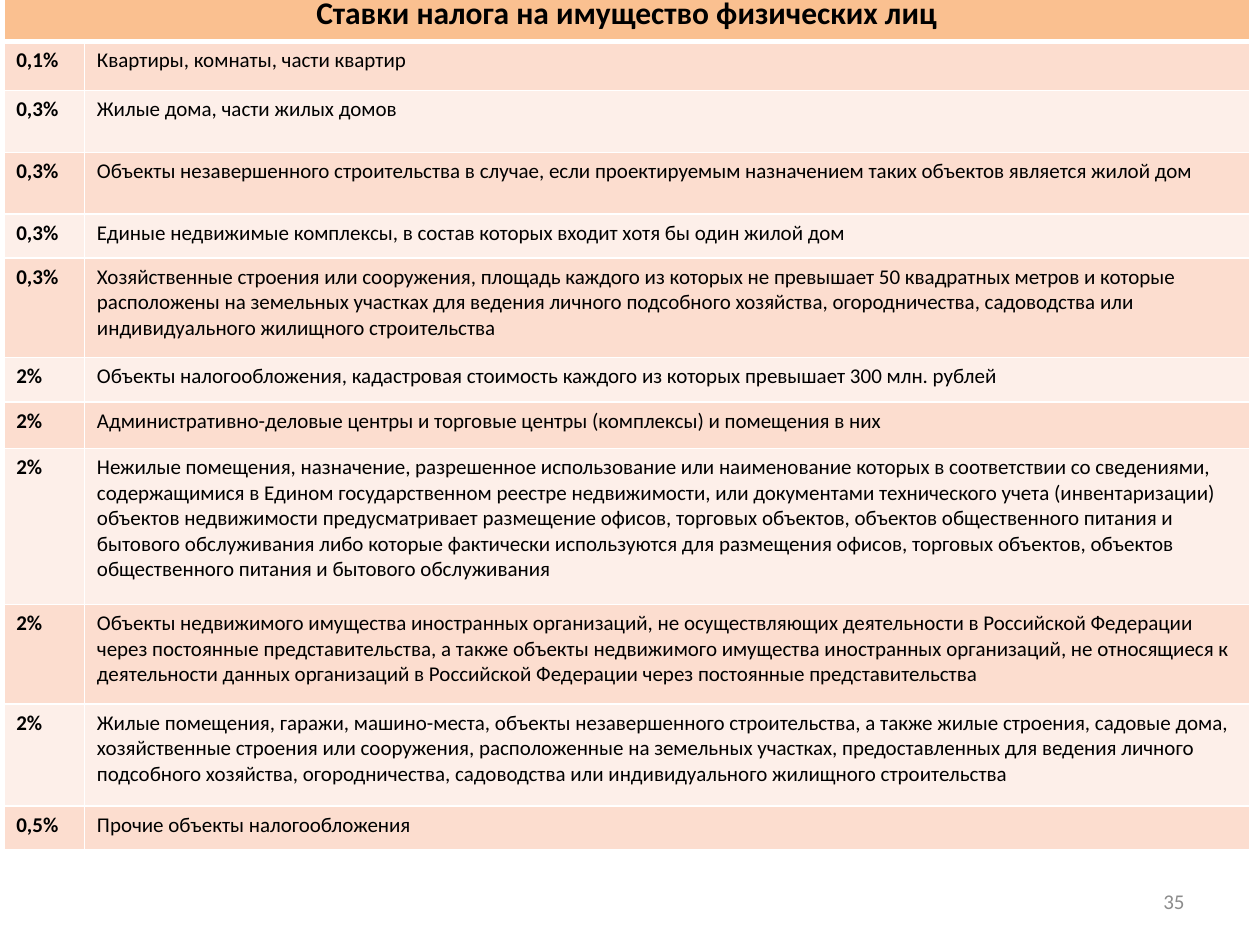
from lxml.etree import SubElement
from pptx import Presentation
from pptx.dml.color import RGBColor
from pptx.enum.text import MSO_ANCHOR, PP_ALIGN
from pptx.oxml.ns import qn
from pptx.util import Inches, Pt

COLORS = {"text": "000000", "header": "FAC090", "odd": "FCDDCF", "even": "FDEFE9",
          "border": "FFFFFF", "page": "8C8C8C"}
TITLE = "Ставки налога на имущество физических лиц"
PAGE = "35"
# rate, taxed property, row height in inches
RATES = [
    ("0,1%", "Квартиры, комнаты, части квартир", 0.39),
    ("0,3%", "Жилые дома, части жилых домов", 0.49),
    ("0,3%", "Объекты незавершенного строительства в случае, если проектируемым назначением "
             "таких объектов является жилой дом", 0.49),
    ("0,3%", "Единые недвижимые комплексы, в состав которых входит хотя бы один жилой дом", 0.35),
    ("0,3%", "Хозяйственные строения или сооружения, площадь каждого из которых не превышает "
             "50 квадратных метров и которые расположены на земельных участках для ведения "
             "личного подсобного хозяйства, огородничества, садоводства или индивидуального "
             "жилищного строительства", 0.79),
    ("2%", "Объекты налогообложения, кадастровая стоимость каждого из которых превышает "
           "300 млн. рублей", 0.35),
    ("2%", "Административно-деловые центры и торговые центры (комплексы) и помещения в них", 0.37),
    ("2%", "Нежилые помещения, назначение, разрешенное использование или наименование которых "
           "в соответствии со сведениями, содержащимися в Едином государственном реестре "
           "недвижимости, или документами технического учета (инвентаризации) объектов "
           "недвижимости предусматривает размещение офисов, торговых объектов, объектов "
           "общественного питания и бытового обслуживания либо которые фактически используются "
           "для размещения офисов, торговых объектов, объектов общественного питания и бытового "
           "обслуживания", 1.24),
    ("2%", "Объекты недвижимого имущества иностранных организаций, не осуществляющих "
           "деятельности в Российской Федерации через постоянные представительства, а также "
           "объекты недвижимого имущества иностранных организаций, не относящиеся к "
           "деятельности данных организаций в Российской Федерации через постоянные "
           "представительства", 0.79),
    ("2%", "Жилые помещения, гаражи, машино-места, объекты незавершенного строительства, а "
           "также жилые строения, садовые дома, хозяйственные строения или сооружения, "
           "расположенные на земельных участках, предоставленных для ведения личного подсобного "
           "хозяйства, огородничества, садоводства или индивидуального жилищного "
           "строительства", 0.81),
    ("0,5%", "Прочие объекты налогообложения", 0.35),
]
COL_WIDTHS = [0.64, 9.25]
ROW_HEIGHTS = [0.42] + [height for _, _, height in RATES]


def set_text(tf, text, size=12, bold=False, color="text", align=PP_ALIGN.LEFT):
    p = tf.paragraphs[0]
    p.alignment = align
    r = p.add_run()
    r.text = text
    r.font.name = "Calibri"
    r.font.size = Pt(size)
    r.font.bold = bold
    r.font.color.rgb = RGBColor.from_string(COLORS[color])


def set_borders(cell, bottom=1):
    """Draw 1 pt borders round the cell, with a bottom border of its own width."""
    tc_pr = cell._tc.get_or_add_tcPr()
    for side, width in (("L", 1), ("R", 1), ("T", 1), ("B", bottom)):
        ln = SubElement(tc_pr, qn(f"a:ln{side}"), w=str(Pt(width)))
        fill = SubElement(ln, qn("a:solidFill"))
        SubElement(fill, qn("a:srgbClr"), val=COLORS["border"])


def fill_cell(cell, text, fill, bottom=1, **text_format):
    set_borders(cell, bottom)
    cell.fill.solid()
    cell.fill.fore_color.rgb = RGBColor.from_string(COLORS[fill])
    set_text(cell.text_frame, text, **text_format)


def add_rates_table(s):
    frame = s.shapes.add_table(len(ROW_HEIGHTS), len(COL_WIDTHS), Inches(0.03), Inches(-0.09),
                               Inches(sum(COL_WIDTHS)), Inches(sum(ROW_HEIGHTS)))
    table = frame.table
    for col, width in zip(table.columns, COL_WIDTHS):
        col.width = Inches(width)
    for row, height in zip(table.rows, ROW_HEIGHTS):
        row.height = Inches(height)

    header = table.cell(0, 0)
    header.merge(table.cell(0, 1))
    fill_cell(header, TITLE, "header", bottom=3, size=18, bold=True, align=PP_ALIGN.CENTER)
    for i, (rate, subject, _) in enumerate(RATES, start=1):
        band = "odd" if i % 2 else "even"
        fill_cell(table.cell(i, 0), rate, band, bold=True)
        fill_cell(table.cell(i, 1), subject, band)


def add_page_number(s):
    tf = s.shapes.add_textbox(Inches(7.17), Inches(6.95), Inches(2.33), Inches(0.4)).text_frame
    tf.word_wrap = True
    tf.vertical_anchor = MSO_ANCHOR.MIDDLE
    set_text(tf, PAGE, color="page", align=PP_ALIGN.RIGHT)


def main():
    prs = Presentation()
    prs.slide_width, prs.slide_height = Inches(10), Inches(7.5)
    s = prs.slides.add_slide(prs.slide_layouts[6])
    add_rates_table(s)
    add_page_number(s)
    prs.save("out.pptx")


if __name__ == "__main__":
    main()
